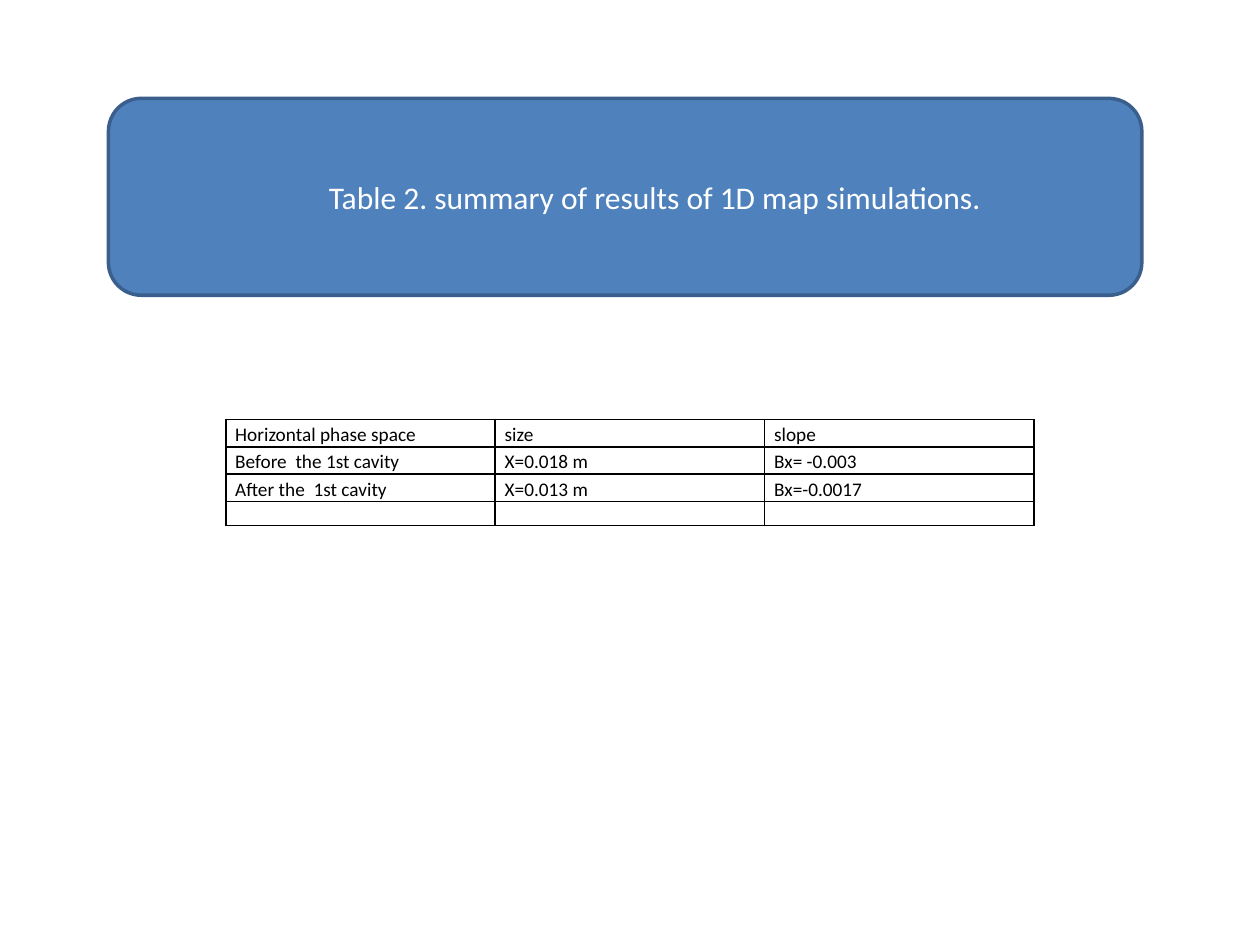
from lxml.etree import SubElement
from pptx import Presentation
from pptx.dml.color import RGBColor
from pptx.enum.shapes import MSO_SHAPE as Preset
from pptx.enum.text import MSO_ANCHOR as Anchor, PP_ALIGN as Align
from pptx.oxml.ns import qn
from pptx.util import Pt

BLUE = RGBColor(0x4F, 0x81, 0xBD)
DARK_BLUE = RGBColor(0x3A, 0x5F, 0x8C)
WHITE = RGBColor(0xFF, 0xFF, 0xFF)
BLACK = RGBColor(0, 0, 0)
TITLE_FONT = {"name": "Calibri", "size": Pt(18)}
CELL_FONT = {"name": "Calibri", "size": Pt(11)}
TITLE_FRAME = {"word_wrap": True, "vertical_anchor": Anchor.MIDDLE, "margin_left": Pt(120.5)}
CELL_MARGINS = {"margin_left": Pt(5.4), "margin_right": Pt(5.4),
                "margin_top": 0, "margin_bottom": 0}
RESULTS = [
    ("Horizontal phase space", "size", "slope"),
    ("Before  the 1st cavity", "X=0.018 m", "Bx= -0.003"),
    ("After the  1st cavity", "X=0.013 m", "Bx=-0.0017"),
    ("", "", ""),
]


def apply(target, values):
    for key, value in values.items():
        setattr(target, key, value)


def add_title_banner(slide, left, top, width, height):
    banner = slide.shapes.add_shape(Preset.ROUNDED_RECTANGLE, left, top, width, height)
    banner.shadow.inherit = False
    banner.fill.solid()
    banner.fill.fore_color.rgb = BLUE
    banner.line.color.rgb = DARK_BLUE
    banner.line.width = Pt(2)
    apply(banner.text_frame, TITLE_FRAME)
    title = banner.text_frame.paragraphs[0]
    title.alignment = Align.LEFT
    title_run = title.add_run()
    title_run.text = "Table 2. summary of results of 1D map simulations."
    apply(title_run.font, TITLE_FONT)
    title_run.font.color.rgb = WHITE


def add_borders(cell):
    properties = cell._tc.get_or_add_tcPr()
    for side in ("a:lnL", "a:lnR", "a:lnT", "a:lnB"):
        border = SubElement(properties, qn(side), w=str(Pt(1)))
        fill = SubElement(border, qn("a:solidFill"))
        SubElement(fill, qn("a:srgbClr"), val=str(BLACK))


def fill_cell(cell, wording):
    add_borders(cell)
    cell.fill.background()
    apply(cell, CELL_MARGINS)
    entry = cell.text_frame.paragraphs[0]
    if wording:
        entry.line_spacing = 1.15
        entry_run = entry.add_run()
        entry_run.text = wording
        apply(entry_run.font, CELL_FONT)
        entry_run.font.color.rgb = BLACK
    else:
        SubElement(entry._p, qn("a:endParaRPr"), sz="1100")


def add_results_table(slide, left, top, width, height):
    results = slide.shapes.add_table(len(RESULTS), len(RESULTS[0]), left, top, width, height).table
    apply(results, {"first_row": False, "horz_banding": False})
    for row, wordings in zip(results.rows, RESULTS):
        row.height = Pt(15.6) if any(wordings) else Pt(13.4)
        for cell, wording in zip(row.cells, wordings):
            fill_cell(cell, wording)


def main():
    deck = Presentation()
    apply(deck, {"slide_width": Pt(720), "slide_height": Pt(540)})
    slide = deck.slides.add_slide(deck.slide_layouts[6])
    add_results_table(slide, Pt(129), Pt(239.7), Pt(462), Pt(60.2))
    add_title_banner(slide, Pt(62), Pt(56.2), Pt(590.5), Pt(112.5))
    deck.save("out.pptx")


if __name__ == "__main__":
    main()
